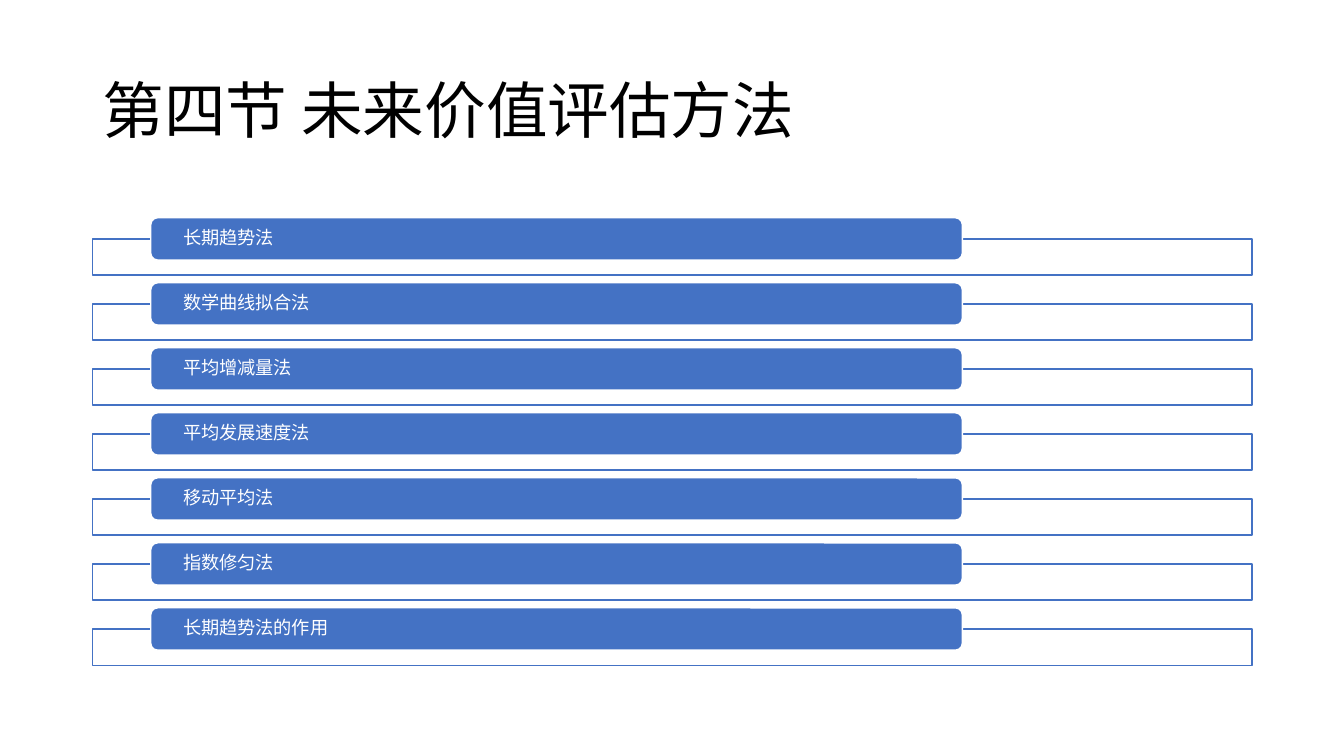
from lxml.etree import SubElement
from pptx import Presentation
from pptx.dml.color import RGBColor
from pptx.enum.shapes import MSO_SHAPE as Preset
from pptx.enum.text import MSO_ANCHOR as Anchor, PP_ALIGN as Align
from pptx.oxml.ns import qn
from pptx.util import Inches, Pt

COLORS = {"white": "FFFFFF", "blue": "4472C4", "black": "000000"}
FONT = "Noto Sans CJK SC"
TITLE = "第四节 未来价值评估方法"
METHODS = ["长期趋势法", "数学曲线拟合法", "平均增减量法", "平均发展速度法",
           "移动平均法", "指数修匀法", "长期趋势法的作用"]

ROW_PITCH = 0.645
FRAME_DROP, FRAME_HEIGHT = 0.21, 0.36
BAR_INDENT, BAR_WIDTH, BAR_HEIGHT = 0.575, 8.05, 0.42


def color(name):
    return RGBColor.from_string(COLORS[name])


def write(holder, wording, size, ink, side_inset):
    """Put one left-aligned, vertically centred line into a shape."""
    frame = holder.text_frame
    frame_format = {"word_wrap": True, "vertical_anchor": Anchor.MIDDLE,
                    "margin_left": Inches(side_inset), "margin_right": Inches(side_inset),
                    "margin_top": 0, "margin_bottom": 0}
    for key, value in frame_format.items():
        setattr(frame, key, value)
    line = frame.paragraphs[0]
    line.alignment, line.line_spacing = Align.LEFT, 0.9
    words = line.add_run()
    words.text = wording
    for key, value in {"size": Pt(size), "name": FONT}.items():
        setattr(words.font, key, value)
    words.font.color.rgb = color(ink)
    # East Asian typeface
    SubElement(words.font._element, qn("a:ea"), typeface=FONT)


def add_box(slide, preset, box, fill, outline):
    shape = slide.shapes.add_shape(preset, *map(Inches, box))
    shape.shadow.inherit = False
    shape.fill.solid()
    shape.fill.fore_color.rgb = color(fill)
    shape.line.color.rgb = color(outline)
    shape.line.width = Pt(1)
    return shape


def add_title(slide, box):
    heading = slide.shapes.add_textbox(*map(Inches, box))
    write(heading, TITLE, 44, "black", 0.1)


def add_method_row(slide, left, top, width, method):
    # Open frame behind the bar, slightly see-through
    frame = add_box(slide, Preset.RECTANGLE,
                    (left, top + FRAME_DROP, width, FRAME_HEIGHT), "white", "blue")
    tint = frame._element.spPr.find(qn("a:solidFill")).find(qn("a:srgbClr"))
    SubElement(tint, qn("a:alpha"), val="90000")
    # Labelled bar
    bar = add_box(slide, Preset.ROUNDED_RECTANGLE,
                  (left + BAR_INDENT, top, BAR_WIDTH, BAR_HEIGHT), "blue", "white")
    write(bar, method, 13, "white", 0.3)


def add_method_list(slide, box):
    left, top, width = box
    for row, method in enumerate(METHODS):
        add_method_row(slide, left, top + row * ROW_PITCH, width, method)


def main():
    deck = Presentation()
    deck.slide_width, deck.slide_height = Inches(13.33), Inches(7.5)
    slide = deck.slides.add_slide(deck.slide_layouts[6])
    add_title(slide, (0.92, 0.4, 11.5, 1.45))
    add_method_list(slide, (0.92, 2.16, 11.5))
    deck.save("out.pptx")


if __name__ == "__main__":
    main()
